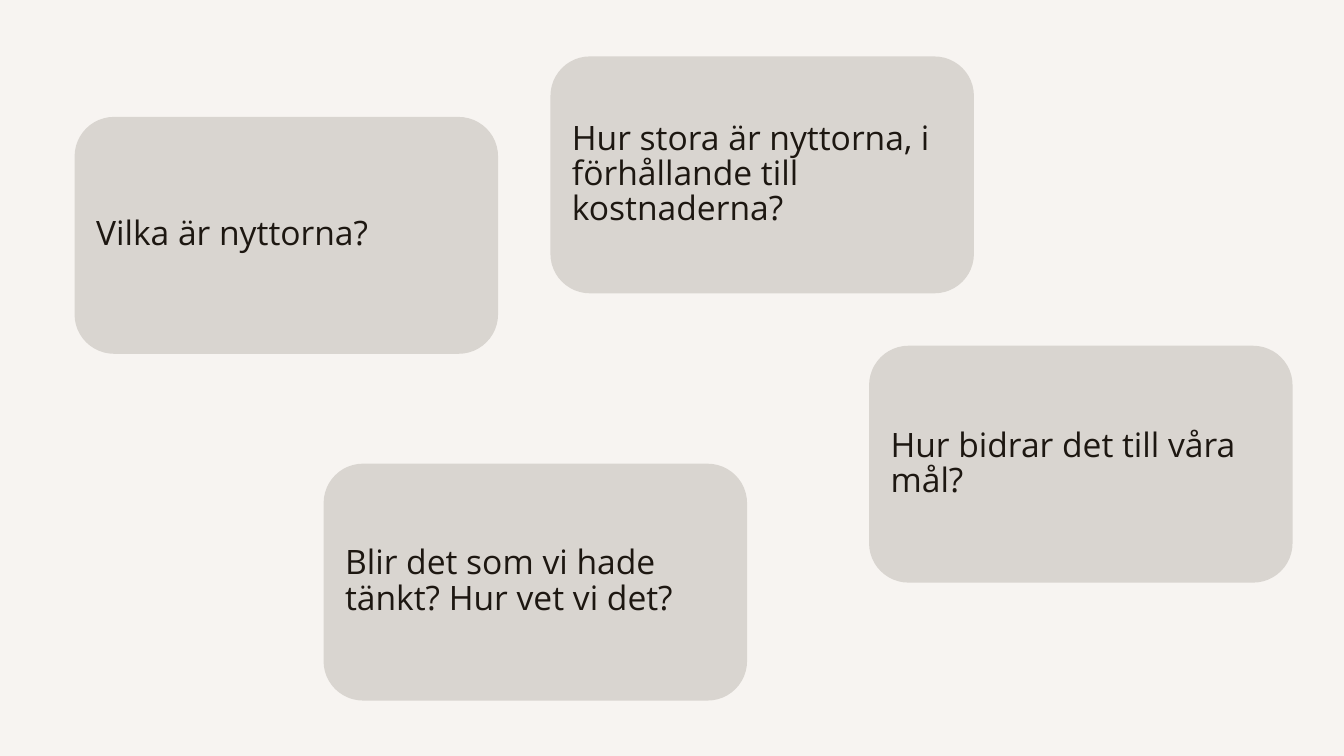
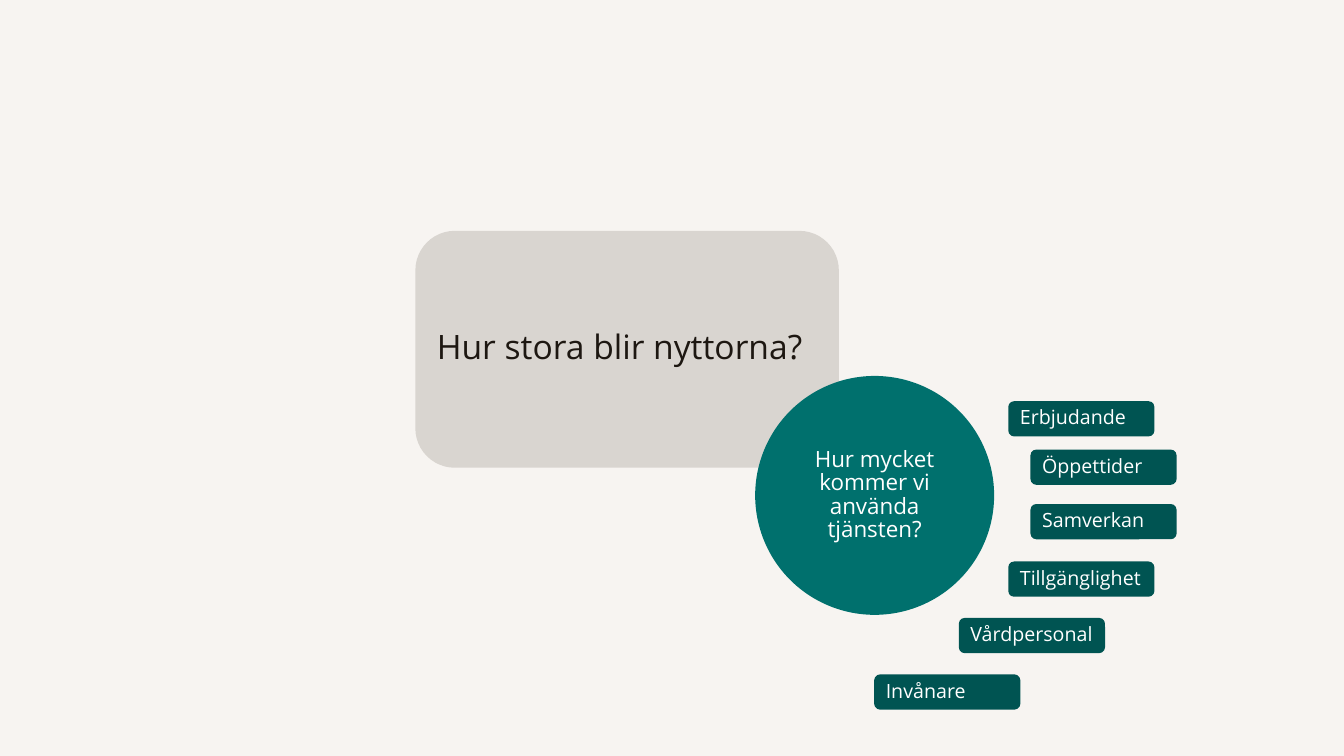
from pptx import Presentation
from pptx.dml.color import RGBColor
from pptx.enum.shapes import MSO_SHAPE
from pptx.enum.text import MSO_ANCHOR, PP_ALIGN
from pptx.util import Inches, Pt

CARD = MSO_SHAPE.FLOWCHART_ALTERNATE_PROCESS
CIRCLE = MSO_SHAPE.OVAL
TAG = MSO_SHAPE.ROUNDED_RECTANGLE
MIDDLE = MSO_ANCHOR.MIDDLE
LEFT, CENTER = PP_ALIGN.LEFT, PP_ALIGN.CENTER

CREAM = RGBColor(0xF7, 0xF4, 0xF1)
SAND = RGBColor(0xD9, 0xD5, 0xD0)
INK = RGBColor(0x1D, 0x17, 0x11)
TEAL = RGBColor(0x00, 0x70, 0x6D)
DARK_TEAL = RGBColor(0x00, 0x54, 0x52)
WHITE = RGBColor(0xFF, 0xFF, 0xFF)
FONT = "Open Sans"
LINE_SPACING = 0.88

# Content: text, left, top (inches)
QUESTIONS = [
    ("Vilka är nyttorna?", 0.74, 1.16),
    ("Hur stora är nyttorna, i förhållande till kostnaderna?", 5.46, 0.56),
    ("Blir det som vi hade tänkt? Hur vet vi det?", 3.21, 4.6),
    ("Hur bidrar det till våra mål?", 8.62, 3.43),
]
MAIN_QUESTION = ("Hur stora blir nyttorna?", 4.12, 2.29)
USAGE_QUESTION = ("Hur mycket kommer vi använda tjänsten?", 7.49, 3.73)
FACTORS = [
    ("Erbjudande", 10, 3.98),
    ("Öppettider", 10.22, 4.46),
    ("Samverkan", 10.22, 5),
    ("Tillgänglighet", 10, 5.57),
    ("Vårdpersonal", 9.51, 6.13),
    ("Invånare", 8.67, 6.69),
]

# Look of each part: outline, width, height, fill, text colour, size, alignment
STYLES = {
    "question": (CARD, 4.2, 2.35, SAND, INK, 24, LEFT),
    "usage": (CIRCLE, 2.37, 2.37, TEAL, WHITE, 16, CENTER),
    "factor": (TAG, 1.45, 0.35, DARK_TEAL, WHITE, 14, LEFT),
}


def add_part(slide, style, content):
    outline, width, height, fill, colour, size, alignment = STYLES[style]
    text, left, top = content
    part = slide.shapes.add_shape(
        outline, Inches(left), Inches(top), Inches(width), Inches(height))
    part.shadow.inherit = False
    part.fill.solid()
    part.fill.fore_color.rgb = fill
    part.line.fill.background()

    frame = part.text_frame
    frame.word_wrap = True
    frame.vertical_anchor = MIDDLE
    if style == "factor":
        frame.margin_right = Inches(0)  # room for the longest word
    paragraph = frame.paragraphs[0]
    paragraph.alignment = alignment
    paragraph.line_spacing = LINE_SPACING
    run = paragraph.add_run()
    run.text = text
    run.font.name = FONT
    run.font.size = Pt(size)
    run.font.color.rgb = colour


def main():
    prs = Presentation()
    prs.slide_width, prs.slide_height = Inches(13.33), Inches(7.5)
    background = prs.slide_master.background.fill
    background.solid()
    background.fore_color.rgb = CREAM
    blank = prs.slide_layouts.get_by_name("Blank")

    # Slide 1: the four questions
    overview = prs.slides.add_slide(blank)
    for question in QUESTIONS:
        add_part(overview, "question", question)

    # Slide 2: the size of the benefits and what drives usage
    usage = prs.slides.add_slide(blank)
    add_part(usage, "question", MAIN_QUESTION)
    add_part(usage, "usage", USAGE_QUESTION)
    for factor in FACTORS:
        add_part(usage, "factor", factor)

    prs.save("out.pptx")


if __name__ == "__main__":
    main()
